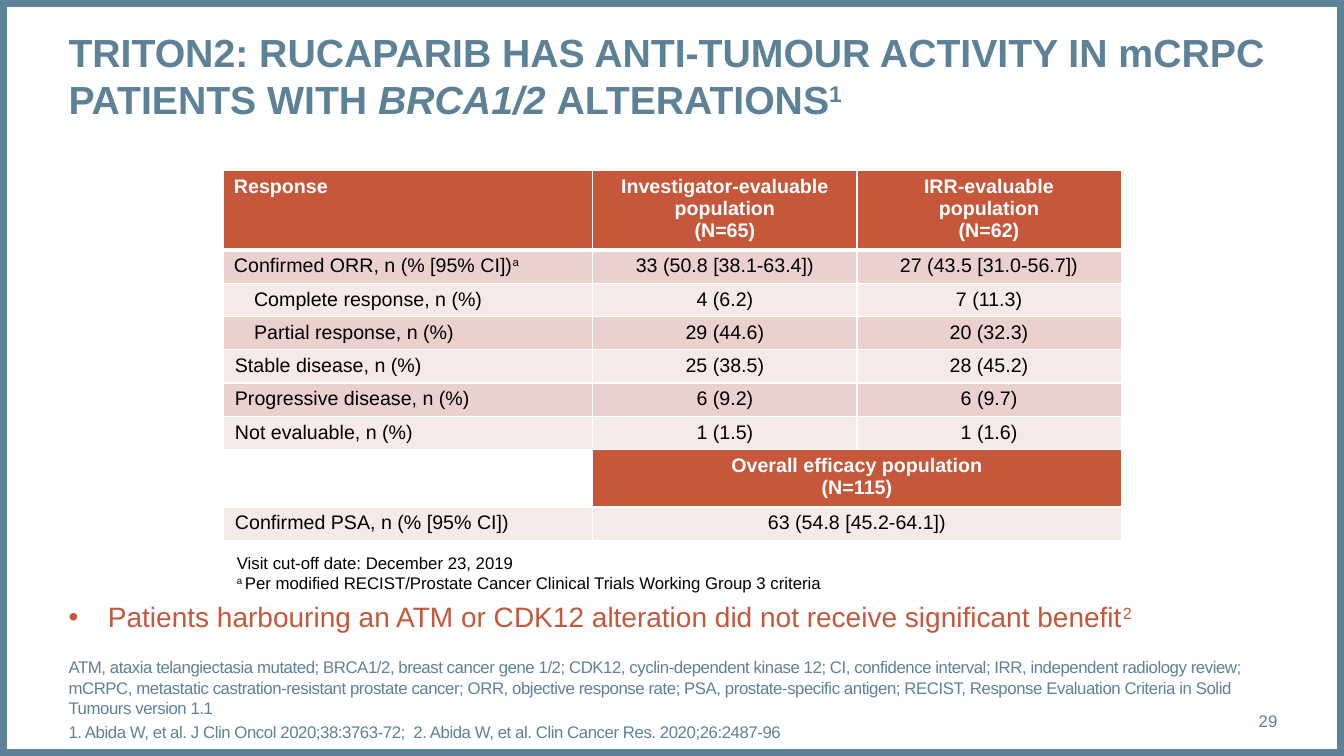
from lxml import etree
from pptx import Presentation
from pptx.dml.color import RGBColor
from pptx.enum.shapes import MSO_SHAPE
from pptx.enum.text import MSO_ANCHOR, MSO_AUTO_SIZE, PP_ALIGN
from pptx.oxml.ns import qn
from pptx.util import Inches, Pt

RECTANGLE = MSO_SHAPE.RECTANGLE
TOP, MIDDLE = MSO_ANCHOR.TOP, MSO_ANCHOR.MIDDLE
LEFT, CENTER, RIGHT = PP_ALIGN.LEFT, PP_ALIGN.CENTER, PP_ALIGN.RIGHT
NO_AUTOFIT = MSO_AUTO_SIZE.NONE
BLUE, RUST, WHITE, BLACK = "5D8298", "C6573B", "FFFFFF", "000000"
BAND_DARK, BAND_LIGHT = "EAD1CE", "F5EAE8"


def write(paragraph, pieces, size, color, bold=False, align=LEFT):
    """Write (text, style) pieces; style is "", "italic" or "super"."""
    paragraph.text = pieces[0][0]
    paragraph.alignment = align
    for text, _ in pieces[1:]:
        paragraph.add_run().text = text
    for run in paragraph.runs:
        run.font.name = "Arial"
        run.font.size = Pt(size)
        run.font.bold = bold
        run.font.color.rgb = RGBColor.from_string(color)
    for (_, style), run in zip(pieces, paragraph.runs):
        if style == "italic":
            run.font.italic = True
        elif style == "super":
            run.font._element.set("baseline", "30000")


def prepare(shape, left, top, width, height, anchor=TOP, inset=0):
    """Place a text shape and return its wrapped text frame."""
    shape.left, shape.top = Inches(left), Inches(top)
    shape.width, shape.height = Inches(width), Inches(height)
    frame = shape.text_frame
    frame.word_wrap = True
    frame.auto_size = NO_AUTOFIT
    frame.vertical_anchor = anchor
    frame.margin_left = frame.margin_right = Inches(inset)
    frame.margin_top = frame.margin_bottom = Inches(inset / 2)
    return frame


prs = Presentation()
prs.slide_width, prs.slide_height = Inches(13.33), Inches(7.5)
slide = prs.slides.add_slide(prs.slide_layouts[5])
shapes = slide.shapes

# Frame around the slide
border = shapes.add_shape(RECTANGLE, 0, 0, prs.slide_width, prs.slide_height)
border.shadow.inherit = False
border.fill.background()
border.line.color.rgb = RGBColor.from_string(BLUE)
border.line.width = Pt(10)

# Title
title = prepare(shapes.title, 0.68, 0.28, 11.99, 0.94)
write(title.paragraphs[0], [
    ("TRITON2: RUCAPARIB HAS ANTI-TUMOUR ACTIVITY IN mCRPC PATIENTS WITH ", ""),
    ("BRCA1/2 ", "italic"), ("ALTERATIONS", ""), ("1", "super")], 28, BLUE, bold=True)

# Response table: label indent, row height, fill, then the cells
responses = [
    (0, 0.79, RUST, "Response", "Investigator-evaluable population\v(N=65)",
     "IRR-evaluable\vpopulation\v(N=62)"),
    (0, 0.33, BAND_DARK, "Confirmed ORR, n (% [95% CI])",
     "33 (50.8 [38.1-63.4])", "27 (43.5 [31.0-56.7])"),
    (0.2, 0.33, BAND_LIGHT, "Complete response, n (%)", "4 (6.2)", "7 (11.3)"),
    (0.2, 0.33, BAND_DARK, "Partial response, n (%)", "29 (44.6)", "20 (32.3)"),
    (0.01, 0.33, BAND_LIGHT, "Stable disease, n (%)", "25 (38.5)", "28 (45.2)"),
    (0.01, 0.33, BAND_DARK, "Progressive disease, n (%)", "6 (9.2)", "6 (9.7)"),
    (0.01, 0.33, BAND_LIGHT, "Not evaluable, n (%)", "1 (1.5)", "1 (1.6)"),
    (0, 0.57, RUST, "", "Overall efficacy population\v(N=115)", ""),
    (0.01, 0.33, BAND_LIGHT, "Confirmed PSA, n (% [95% CI])", "63 (54.8 [45.2-64.1])", ""),
]
table = shapes.add_table(len(responses), 3, Inches(2.22), Inches(1.69),
                         Inches(8.9), Inches(3.7)).table
table.horz_banding = False
for column, width in zip(table.columns, (3.66, 2.62, 2.62)):
    column.width = Inches(width)

for r, (indent, height, fill, *texts) in enumerate(responses):
    table.rows[r].height = Inches(height)
    for c, text in enumerate(texts):
        cell = table.cell(r, c)
        properties = cell._tc.get_or_add_tcPr()
        for side in ("lnL", "lnR", "lnT", "lnB"):
            thick = (r, side) in ((0, "lnB"), (1, "lnT"))
            line = etree.SubElement(properties, qn("a:" + side), w=str(Pt(3 if thick else 1)))
            solid = etree.SubElement(line, qn("a:solidFill"))
            etree.SubElement(solid, qn("a:srgbClr"), val=WHITE)
        if c == 0 and not text:
            cell.fill.background()
            continue
        cell.fill.solid()
        cell.fill.fore_color.rgb = RGBColor.from_string(fill)
        if not text:
            continue
        heading = fill == RUST
        pieces = [(text, "")]
        if (r, c) == (1, 0):
            pieces.append(("a", "super"))
        if c == 0:
            cell.margin_left = Inches(0.1 + indent)
        write(cell.text_frame.paragraphs[0], pieces, 14, WHITE if heading else BLACK,
              heading, CENTER if c else LEFT)

# The last two rows share one value across both populations
for r in (7, 8):
    table.cell(r, 1).merge(table.cell(r, 2))

# Table footnotes
footnotes = prepare(shapes.add_textbox(0, 0, 0, 0), 2.25, 5.43, 9.45, 0.5, inset=0.1)
write(footnotes.paragraphs[0], [("Visit cut-off date: December 23, 2019", "")], 12, BLACK)
write(footnotes.add_paragraph(), [
    ("a ", "super"),
    ("Per modified RECIST/Prostate Cancer Clinical Trials Working Group 3 criteria", "")],
    12, BLACK)

# Key message with its bullet
message = prepare(shapes.add_textbox(0, 0, 0, 0), 0.68, 5.95, 11.99, 0.44).paragraphs[0]
write(message, [
    ("Patients harbouring an ATM or CDK12 alteration did not receive significant benefit", ""),
    ("2", "super")], 20, RUST)
bullet = message._p.get_or_add_pPr()
bullet.set("marL", str(Inches(0.39)))
bullet.set("indent", str(-Inches(0.39)))
etree.SubElement(bullet, qn("a:buFont"), typeface="Arial")
etree.SubElement(bullet, qn("a:buChar"), char="•")

# Abbreviations and references
sources = prepare(shapes.add_textbox(0, 0, 0, 0), 0.68, 6.74, 11.82, 0.4, MIDDLE)
write(sources.paragraphs[0], [(
    "ATM, ataxia telangiectasia mutated; BRCA1/2, breast cancer gene 1/2; "
    "CDK12, cyclin-dependent kinase 12; CI, confidence interval; "
    "IRR, independent radiology review; mCRPC, metastatic castration-resistant prostate cancer; "
    "ORR, objective response rate; PSA, prostate-specific antigen; "
    "RECIST, Response Evaluation Criteria in Solid Tumours version 1.1", "")], 12, BLUE)
write(sources.add_paragraph(), [(
    "1. Abida W, et al. J Clin Oncol 2020;38:3763-72;  "
    "2. Abida W, et al. Clin Cancer Res. 2020;26:2487-96", "")], 12, BLUE)
for paragraph in sources.paragraphs:
    paragraph.space_before = Pt(3)
    paragraph.runs[0].font._element.set("spc", "-30")

# Slide number
number = prepare(shapes.add_textbox(0, 0, 0, 0), 11.5, 6.95, 1.17, 0.4, MIDDLE)
write(number.paragraphs[0], [("29", "")], 12, BLUE, align=RIGHT)

prs.save("out.pptx")
